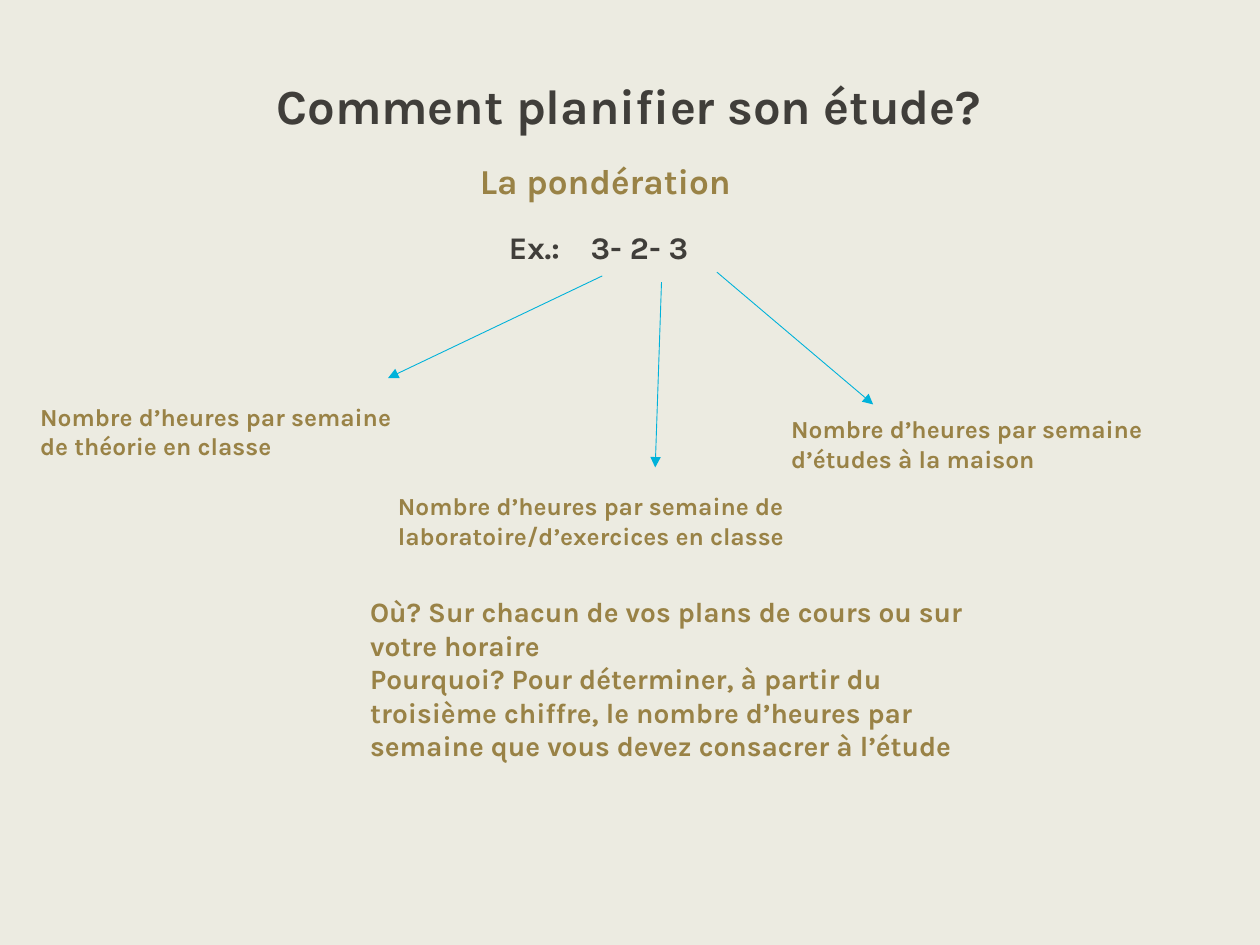
from lxml.etree import SubElement
from pptx import Presentation
from pptx.dml.color import RGBColor
from pptx.enum.shapes import MSO_CONNECTOR
from pptx.enum.text import PP_ALIGN
from pptx.oxml.ns import qn
from pptx.util import Inches, Pt

FONT = "Karla"
BACKGROUND, DARK, GOLD, BLUE = "ECEBE1", "403E3A", "998246", "00B2DA"
TAB_POSITION = 0.65

# (left, top, width, height), size, colour, paragraphs
TITLE = ((1.92, 0.55, 6.14, 0.57), 28, DARK, ["Comment planifier son étude?"])
TEXTS = [
    ((3.71, 1.22, 2.68, 0.44), 20, GOLD, ["La pondération"]),
    ((3.94, 1.76, 1.87, 0.4), 18, DARK, ["Ex.:\t3- 2- 3"]),
    ((0.22, 3.14, 5, 0.57), 14, GOLD,
     ["Nombre d’heures par semaine", "de théorie en classe"]),
    ((6.18, 3.24, 3.45, 0.57), 14, GOLD,
     ["Nombre d’heures par semaine", "d’études à la maison"]),
    ((3.06, 3.85, 5, 0.57), 14, GOLD,
     ["Nombre d’heures par semaine de laboratoire/d’exercices en classe"]),
    ((2.84, 4.67, 5, 1.44), 16, GOLD,
     ["Où? Sur chacun de vos plans de cours ou sur votre horaire",
      "Pourquoi? Pour déterminer, à partir du troisième chiffre, le nombre "
      "d’heures par semaine que vous devez consacrer à l’étude"]),
]
ARROWS = [  # start, end
    ((5.69, 2.16), (6.93, 3.21)),
    ((4.78, 2.19), (3.08, 3)),
    ((5.25, 2.24), (5.2, 3.71)),
]


def color(value):
    return RGBColor.from_string(value)


def add_tab_stop(paragraph, position):
    properties = paragraph._p.get_or_add_pPr()
    tabs = SubElement(properties, qn("a:tabLst"))
    SubElement(tabs, qn("a:tab"), pos=str(Inches(position)), algn="l")


def add_text(slide, box, size, text_color, lines, alignment=PP_ALIGN.LEFT, wrap=True):
    text_frame = slide.shapes.add_textbox(*map(Inches, box)).text_frame
    text_frame.word_wrap = wrap
    text_frame.text = "\n".join(lines)
    for paragraph in text_frame.paragraphs:
        paragraph.alignment = alignment
        if "\t" in paragraph.text:
            add_tab_stop(paragraph, TAB_POSITION)
        for run in paragraph.runs:
            run.font.name = FONT
            run.font.size = Pt(size)
            run.font.bold = True
            run.font.color.rgb = color(text_color)


def add_arrow(slide, start, end):
    arrow = slide.shapes.add_connector(
        MSO_CONNECTOR.STRAIGHT, *map(Inches, start + end))
    arrow.line.color.rgb = color(BLUE)
    arrow.line.width = Pt(0.5)
    SubElement(arrow.line._get_or_add_ln(), qn("a:tailEnd"), type="triangle")
    SubElement(arrow._element.spPr, qn("a:effectLst"))


def main():
    presentation = Presentation()
    presentation.slide_width = Inches(10)
    presentation.slide_height = Inches(7.5)
    slide = presentation.slides.add_slide(presentation.slide_layouts[6])
    slide.background.fill.solid()
    slide.background.fill.fore_color.rgb = color(BACKGROUND)

    add_text(slide, *TITLE, alignment=PP_ALIGN.CENTER, wrap=False)
    for text in TEXTS:
        add_text(slide, *text)
    for start, end in ARROWS:
        add_arrow(slide, start, end)
    presentation.save("out.pptx")


if __name__ == "__main__":
    main()
